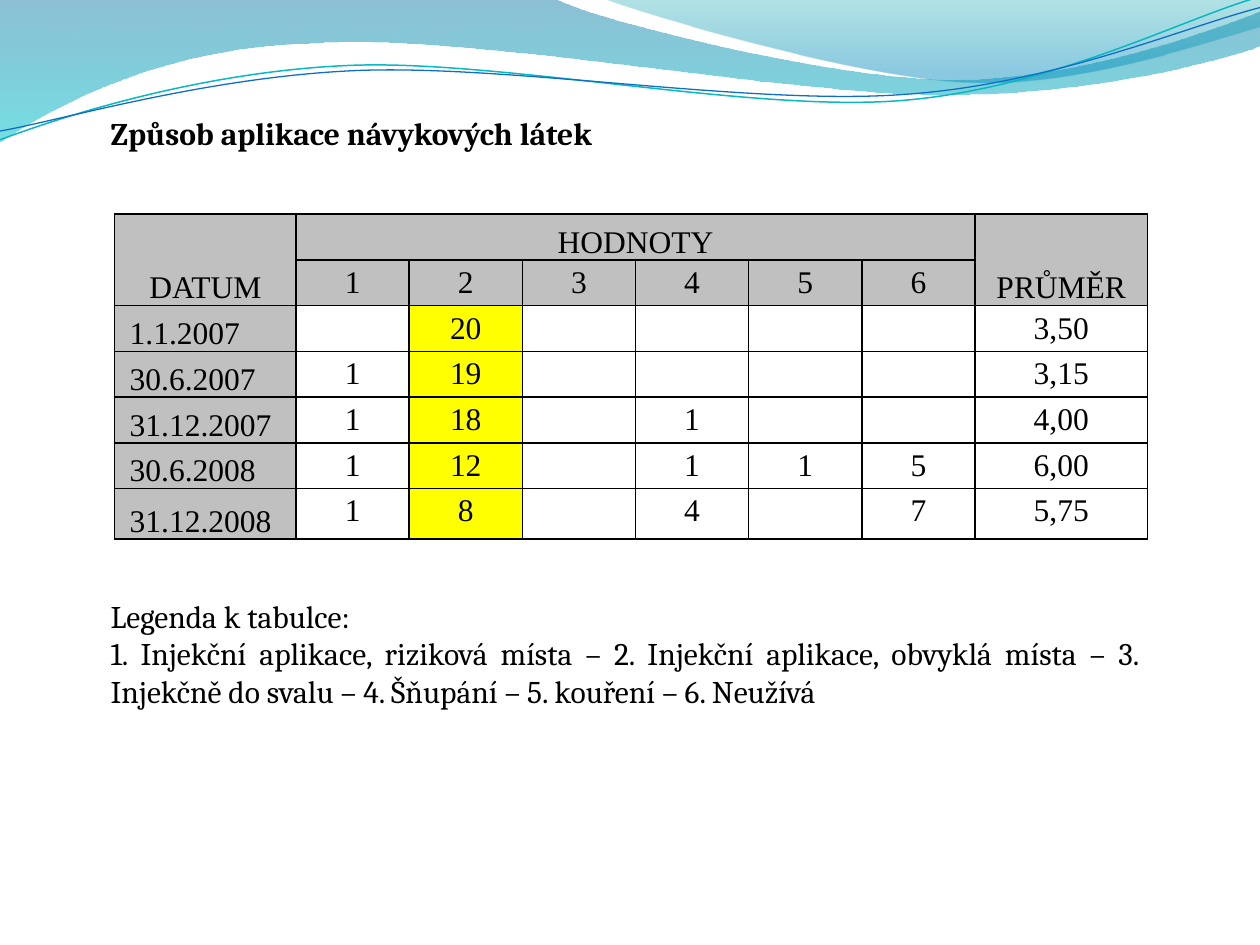
from math import cos, radians, sin

from lxml.etree import SubElement
from pptx import Presentation
from pptx.dml.color import RGBColor
from pptx.enum.text import MSO_ANCHOR as Anchor, MSO_AUTO_SIZE as AutoSize, PP_ALIGN as Align
from pptx.oxml.ns import qn
from pptx.util import Inches, Pt

BLACK = RGBColor(0x00, 0x00, 0x00)
GREY = RGBColor(0xC0, 0xC0, 0xC0)
YELLOW = RGBColor(0xFF, 0xFF, 0x00)
BLUE = RGBColor(0x0F, 0x6F, 0xC6)
TEAL = RGBColor(0x0A, 0xB8, 0xBF)
WAVE_TOP = RGBColor(0x00, 0x74, 0xA1)
WAVE_BOTTOM = RGBColor(0x00, 0xC6, 0xCF)
CREST_TOP = RGBColor(0x00, 0xA1, 0xA9)
CREST_BOTTOM = RGBColor(0x00, 0x8B, 0xBF)


class Deck:
    heading_font = "Cambria"
    table_font = "Times New Roman"
    size = Pt(18)

    def __init__(self):
        self.prs = Presentation()
        self.prs.slide_width, self.prs.slide_height = Inches(10), Inches(7.5)
        self.s = self.prs.slides.add_slide(self.prs.slide_layouts[6])

    def outline(self, box, segments, close=False, rotation=0):
        """Segments hold a point (x, y) or a Bezier curve (x1, y1, x2, y2, x, y)."""
        left, top, width, height = box
        builder = self.s.shapes.build_freeform(Inches(left), Inches(top), scale=1.0)
        builder.add_line_segments([(Inches(left + width), Inches(top + height))], close=close)
        sp = builder.convert_to_shape()
        sp.shadow.inherit = False
        sp.rotation = rotation

        # Smooth path, turned back about the centre of the box
        path = next(sp._element.iter(qn("a:path")))
        for child in list(path):
            path.remove(child)
        turn = radians(-rotation)
        for i, seg in enumerate(segments):
            tag = "a:moveTo" if i == 0 else "a:lnTo" if len(seg) == 2 else "a:cubicBezTo"
            command = SubElement(path, qn(tag))
            for x, y in zip(seg[::2], seg[1::2]):
                dx, dy = x - left - width / 2, y - top - height / 2
                px = width / 2 + dx * cos(turn) - dy * sin(turn)
                py = height / 2 + dx * sin(turn) + dy * cos(turn)
                SubElement(command, qn("a:pt"), x=str(int(Inches(px))), y=str(int(Inches(py))))
        if close:
            SubElement(path, qn("a:close"))
        return sp

    def wave(self, box, segments, stops):
        sp = self.outline(box, segments, close=True)
        sp.line.fill.background()
        sp.fill.gradient()
        sp.fill.gradient_angle = 270
        for stop, (position, color, _) in zip(sp.fill.gradient_stops, stops):
            stop.position = position
            stop.color.rgb = color
        colors = sp._element.spPr.iter(qn("a:srgbClr"))
        for clr, (_, _, opacity) in zip(list(colors), stops):
            SubElement(clr, qn("a:alpha")).set("val", str(opacity * 1000))

    def curve(self, box, segments, color, width):
        sp = self.outline(box, segments, rotation=357.3)
        sp.fill.background()
        sp.line.color.rgb = color
        sp.line.width = Pt(width)

    def format(self, p, font, align, bold=False):
        p.alignment = align
        for r in p.runs:
            r.font.name, r.font.size, r.font.bold = font, self.size, bold
            r.font.color.rgb = BLACK

    def text(self, box, text, align=Align.LEFT, anchor=Anchor.TOP, bold=False):
        tf = self.s.shapes.add_textbox(*map(Inches, box)).text_frame
        tf.word_wrap = True
        tf.auto_size = AutoSize.SHAPE_TO_FIT_TEXT
        tf.vertical_anchor = anchor
        tf.text = text
        for p in tf.paragraphs:
            self.format(p, self.heading_font, align, bold)

    def borders(self, cell):
        tc_pr = cell._tc.get_or_add_tcPr()
        for side in ("a:lnL", "a:lnR", "a:lnT", "a:lnB"):
            ln = SubElement(tc_pr, qn(side), w=str(Pt(1)))
            fill = SubElement(ln, qn("a:solidFill"))
            SubElement(fill, qn("a:srgbClr"), val=str(BLACK))

    def cell(self, cell, text, fill, align, anchor, indent):
        self.borders(cell)
        cell.margin_left = Inches(indent)
        cell.margin_right = cell.margin_top = cell.margin_bottom = 0
        cell.vertical_anchor = anchor
        if fill is None:
            cell.fill.background()
        else:
            cell.fill.solid()
            cell.fill.fore_color.rgb = fill
        if text:
            p = cell.text_frame.paragraphs[0]
            p.text = text
            p.line_spacing = 1.15
            self.format(p, self.table_font, align)

    def table(self, box, widths, heights, rows, merges):
        table = self.s.shapes.add_table(len(heights), len(widths), *map(Inches, box)).table
        table.first_row = table.horz_banding = False
        for col, width in zip(table.columns, widths):
            col.width = Inches(width)
        for row, height in zip(table.rows, heights):
            row.height = Inches(height)
        for r, row in enumerate(rows):
            for c, text in enumerate(row):
                date = r > 1 and c == 0
                fill = GREY if r < 2 or c == 0 else YELLOW if c == 2 else None
                self.cell(table.cell(r, c), text, fill,
                          Align.LEFT if date else Align.CENTER,
                          Anchor.BOTTOM if r == 0 or c == 0 else Anchor.TOP,
                          0.12 if date else 0)
        for first, last in merges:
            table.cell(*first).merge(table.cell(*last))


def main():
    deck = Deck()

    # Waves along the top edge
    deck.wave((-0.01, -0.01, 10.02, 1.14),
              [(0, 0), (4.4, -0.01), (4.76, 0.17, 6.64, 0.63, 7.58, 0.63),
               (8.53, 0.63, 9.58, 0.26, 10, 0.09), (10.01, 0.36),
               (9.83, 0.44, 8.7, 0.76, 7.46, 0.75), (6.22, 0.75, 3.82, 0.28, 2.57, 0.34),
               (1.29, 0.36, 0.46, 0.83, -0.01, 1.13), (0, 0)],
              [(0, WAVE_TOP, 45), (1, WAVE_BOTTOM, 55)])
    deck.wave((4.79, -0.01, 5.21, 0.7),
              [(4.79, -0.01), (5.09, 0.11, 6.82, 0.62, 7.69, 0.65),
               (8.56, 0.69, 9.61, 0.32, 10, 0.21), (10, 0), (4.79, -0.01)],
              [(0, CREST_TOP, 30), (0.8, CREST_BOTTOM, 45)])
    deck.curve((-0.02, 0.22, 10.02, 0.71),
               [(0, 1.11), (0.48, 0.93, 1.58, 0.57, 2.77, 0.52),
                (3.95, 0.47, 5.93, 0.89, 7.13, 0.8),
                (8.33, 0.71, 9.38, 0.15, 9.98, -0.02)], TEAL, 0.85)
    deck.curve((-0.02, 0.3, 10.03, 0.58),
               [(0, 1.04), (0.47, 0.96, 1.64, 0.61, 2.83, 0.56),
                (4.03, 0.51, 5.97, 0.84, 7.17, 0.75),
                (8.36, 0.67, 9.41, 0.21, 10, 0.06)], BLUE, 0.75)

    # Table of values by date
    rows = [
        ["DATUM", "HODNOTY", "", "", "", "", "", "PRŮMĚR"],
        ["", "1", "2", "3", "4", "5", "6", ""],
        ["1.1.2007", "", "20", "", "", "", "", "3,50"],
        ["30.6.2007", "1", "19", "", "", "", "", "3,15"],
        ["31.12.2007", "1", "18", "", "1", "", "", "4,00"],
        ["30.6.2008", "1", "12", "", "1", "1", "5", "6,00"],
        ["31.12.2008", "1", "8", "", "4", "", "7", "5,75"],
    ]
    width, height = 8.2, 2.58
    date_col, mean_col, last_row = 1.44, 1.37, 0.4
    value_col = (width - date_col - mean_col) / 6
    deck.table((0.91, 1.7, width, height),
               [date_col] + [value_col] * 6 + [mean_col],
               [(height - last_row) / 6] * 6 + [last_row], rows,
               [((0, 0), (1, 0)), ((0, 1), (0, 6)), ((0, 7), (1, 7))])

    # Heading and legend
    deck.text((0.78, 0.86, 8.28, 0.4), "Způsob aplikace návykových látek", bold=True)
    deck.text((0.78, 4.68, 8.36, 1.01),
              "Legenda k tabulce:\n"
              "1. Injekční aplikace, riziková místa – 2. Injekční aplikace, obvyklá místa – "
              "3. Injekčně do svalu – 4. Šňupání – 5. kouření – 6. Neužívá",
              Align.JUSTIFY, Anchor.MIDDLE)

    deck.prs.save("out.pptx")


if __name__ == "__main__":
    main()
